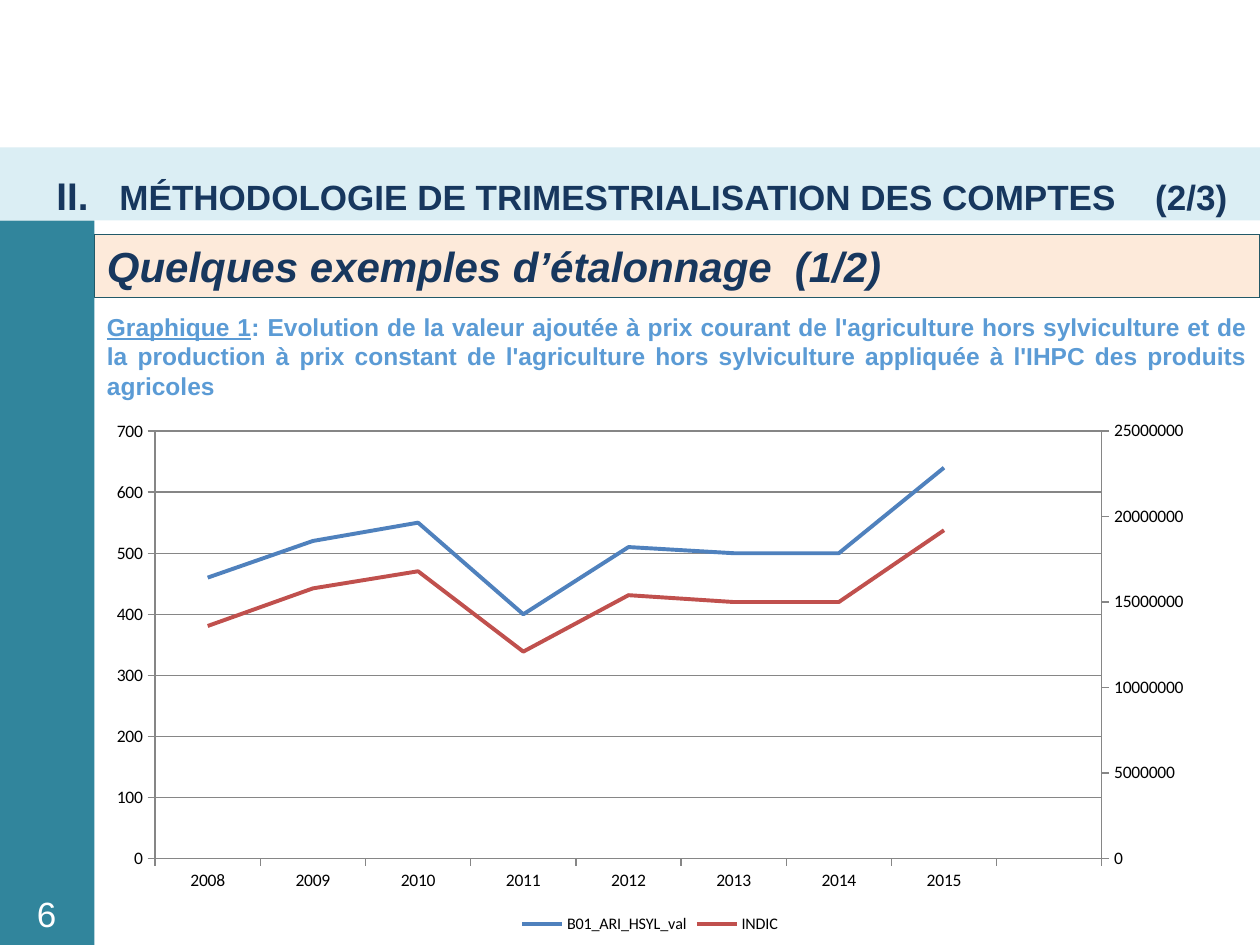
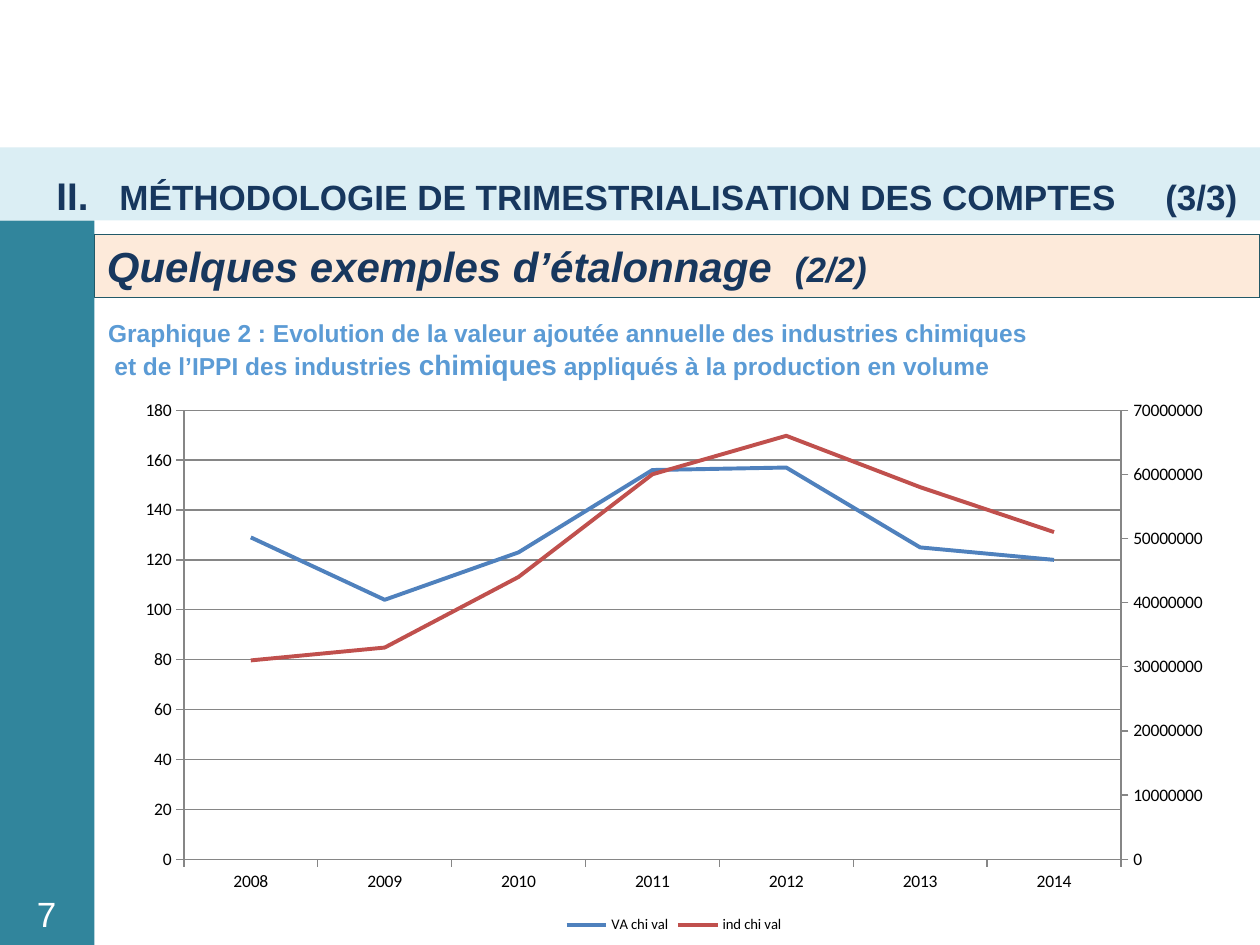
from copy import deepcopy

from lxml import etree
from pptx import Presentation
from pptx.chart.data import CategoryChartData
from pptx.dml.color import RGBColor
from pptx.enum.chart import XL_CHART_TYPE, XL_LEGEND_POSITION, XL_TICK_MARK
from pptx.enum.shapes import MSO_SHAPE
from pptx.enum.text import MSO_ANCHOR, PP_ALIGN
from pptx.oxml.ns import qn
from pptx.util import Inches, Pt

RECT = MSO_SHAPE.RECTANGLE
TOP, MIDDLE = MSO_ANCHOR.TOP, MSO_ANCHOR.MIDDLE
LEFT, CENTER, JUSTIFY = PP_ALIGN.LEFT, PP_ALIGN.CENTER, PP_ALIGN.JUSTIFY
LINE, BOTTOM, OUTSIDE = XL_CHART_TYPE.LINE, XL_LEGEND_POSITION.BOTTOM, XL_TICK_MARK.OUTSIDE

COLORS = {
    "band": "DBEEF4", "sidebar": "31859C", "navy": "17375E", "peach": "FDEADA",
    "border": "215968", "caption": "5B9BD5", "white": "FFFFFF", "black": "000000",
    "axis": "868686", "annual": "4F81BD", "indicator": "C0504D",
}
W, H = 10, 7.5
SIDE = 0.75          # width of the sidebar
BAND_TOP, BAND_H = 1.17, 0.58
BODY_TOP = BAND_TOP + BAND_H
INSET = 0.1


def rgb(name):
    return RGBColor.from_string(COLORS[name])


def box(at):
    return [Inches(v) for v in at]


def add_rect(s, at, fill, border=None):
    sp = s.shapes.add_shape(RECT, *box(at))
    sp.shadow.inherit = False
    sp.fill.solid()
    sp.fill.fore_color.rgb = rgb(fill)
    if border:
        sp.line.color.rgb = rgb(border)
        sp.line.width = Pt(0.75)
    else:
        sp.line.fill.background()
    return sp


def set_tabs(p, stops):
    tabs = etree.SubElement(p._p.get_or_add_pPr(), qn("a:tabLst"))
    for stop in stops:
        etree.SubElement(tabs, qn("a:tab"), pos=str(Inches(stop)), algn="l")


def write(sp, paragraphs, color, align, anchor=MIDDLE, **style):
    """Fill a shape; each paragraph is a list of (text, size) or (text, size, underline)."""
    tf = sp.text_frame
    tf.word_wrap = True
    tf.vertical_anchor = anchor
    for i, runs in enumerate(paragraphs):
        p = tf.add_paragraph() if i else tf.paragraphs[0]
        p.alignment = align
        for text, size, *underline in runs:
            r = p.add_run()
            r.text = text
            font = r.font
            font.name, font.size, font.color.rgb = "Arial", Pt(size), rgb(color)
            font.bold = style.get("bold", False)
            font.italic = style.get("italic", False)
            if underline:
                font.underline = underline[0]
    return tf.paragraphs


def add_frame(s, number, part, part_at):
    """Title band, sidebar and slide number."""
    band = add_rect(s, (0, BAND_TOP, W, BAND_H), "band")
    title = "MÉTHODOLOGIE DE TRIMESTRIALISATION DES COMPTES"
    p = write(band, [[("\tII.\t", 22), (f"{title}\t{part}", 20)]], "navy", LEFT, bold=True)[0]
    p.line_spacing = 1.5
    set_tabs(p, [0.35, 0.85, part_at - INSET])
    add_rect(s, (0, BODY_TOP, SIDE, H - BODY_TOP), "sidebar")
    footer = s.shapes.add_textbox(*box((0.03, 7.05, 0.68, 0.4)))
    write(footer, [[(number, 20)]], "white", CENTER)


def add_subtitle(s, part, part_size):
    sp = add_rect(s, (SIDE, 1.86, W - SIDE, 0.5), "peach", "border")
    runs = [("Quelques exemples d’étalonnage\t", 24), (part, part_size)]
    p = write(sp, [runs], "navy", LEFT, TOP, bold=True, italic=True)[0]
    set_tabs(p, [5.46])


def add_caption(s, at, paragraphs):
    tb = s.shapes.add_textbox(*box(at))
    return write(tb, paragraphs, "caption", JUSTIFY, bold=True)


def move_to_right_axis(chart, maximum, unit):
    """Give the second series its own line plot and value axis."""
    area = chart._chartSpace.chart.plotArea
    left = area.find(qn("c:lineChart"))
    cat, val = area.find(qn("c:catAx")), area.find(qn("c:valAx"))
    right, right_cat, right_val = (deepcopy(e) for e in (left, cat, val))
    left.remove(left.findall(qn("c:ser"))[1])
    right.remove(right.findall(qn("c:ser"))[0])
    left.addnext(right)
    val.addnext(right_val)
    right_val.addnext(right_cat)

    cat_id, val_id = "50010", "50020"
    for ref, new in zip(right.findall(qn("c:axId")), (cat_id, val_id)):
        ref.set("val", new)
    for axis, own, other in ((right_cat, cat_id, val_id), (right_val, val_id, cat_id)):
        axis.find(qn("c:axId")).set("val", own)
        axis.find(qn("c:crossAx")).set("val", other)
    right_cat.find(qn("c:delete")).set("val", "1")
    right_val.remove(right_val.find(qn("c:majorGridlines")))
    right_val.find(qn("c:axPos")).set("val", "r")
    right_val.find(qn("c:crosses")).set("val", "max")
    right_val.find(qn("c:scaling")).find(qn("c:max")).set("val", str(maximum))
    right_val.find(qn("c:majorUnit")).set("val", str(unit))


def add_line_chart(s, at, categories, series, left_scale, right_scale, legend_size):
    data = CategoryChartData()
    data.categories = categories
    for name, values in series.items():
        data.add_series(name, values)
    chart = s.shapes.add_chart(LINE, *box(at), data).chart
    chart.has_title = False
    chart.font.name, chart.font.size = "Calibri", Pt(10)
    chart.font.color.rgb = rgb("black")
    chart.has_legend = True
    chart.legend.position = BOTTOM
    chart.legend.include_in_layout = False
    font = chart.legend.font
    font.name, font.size, font.color.rgb = "Calibri", Pt(legend_size), rgb("black")

    plot = chart.plots[0]
    plot.vary_by_categories = False
    for line, color in zip(plot.series, ("annual", "indicator")):
        line.smooth = False
        line.format.line.color.rgb = rgb(color)
        line.format.line.width = Pt(2.25)

    axis = chart.value_axis
    axis.minimum_scale = 0
    axis.maximum_scale, axis.major_unit = left_scale
    axis.has_major_gridlines = True
    axis.tick_labels.number_format = "General"
    axis.tick_labels.number_format_is_linked = False
    for part in (axis, chart.category_axis, axis.major_gridlines):
        part.format.line.color.rgb = rgb("axis")
        part.format.line.width = Pt(0.75)
    for ax in (axis, chart.category_axis):
        ax.major_tick_mark = OUTSIDE
    move_to_right_axis(chart, *right_scale)


def millions(*values):
    return [round(v * 1_000_000) for v in values]


def years(first, last):
    return [str(y) for y in range(first, last + 1)]


def agriculture_slide(s):
    add_frame(s, "6", "(2/3)", 9.17)
    add_subtitle(s, "(1/2)", 24)
    add_caption(s, (SIDE, 2.42, W - SIDE, 0.81), [[
        ("Graphique 1", 14, True),
        (": Evolution de la valeur ajoutée à prix courant de l'agriculture hors sylviculture "
         "et de la production à prix constant de l'agriculture hors sylviculture appliquée "
         "à l'IHPC des produits agricoles", 14)]])
    add_line_chart(
        s, (SIDE, 3.26, 8.82, 4.19), years(2008, 2015) + [""],
        {"B01_ARI_HSYL_val": [460, 520, 550, 400, 510, 500, 500, 640, None],
         "INDIC": millions(13.6, 15.8, 16.8, 12.1, 15.4, 15, 15, 19.2) + [None]},
        (700, 100), (25_000_000, 5_000_000), 9.2)


def chemicals_slide(s):
    add_frame(s, "7", "(3/3)", 9.25)
    add_subtitle(s, "(2/2)", 20)
    lines = add_caption(s, (0.76, 2.47, 9.24, 0.61), [
        [("Graphique 2 : Evolution de la valeur ajoutée annuelle des industries chimiques", 14)],
        [("et de l’IPPI des industries ", 14), ("chimiques", 16),
         (" appliqués à la production en volume", 14)]])
    lines[1]._p.get_or_add_pPr().set("marL", str(Inches(0.05)))
    add_line_chart(
        s, (0.98, 3.09, 8.74, 4.36), years(2008, 2014),
        {"VA chi val": [129, 104, 123, 156, 157, 125, 120],
         "ind chi val": millions(31, 33, 44, 60, 66, 58, 51)},
        (180, 20), (70_000_000, 10_000_000), 8.4)


def main():
    prs = Presentation()
    prs.slide_width, prs.slide_height = Inches(W), Inches(H)
    for build in (agriculture_slide, chemicals_slide):
        build(prs.slides.add_slide(prs.slide_layouts[6]))
    prs.save("out.pptx")


if __name__ == "__main__":
    main()
